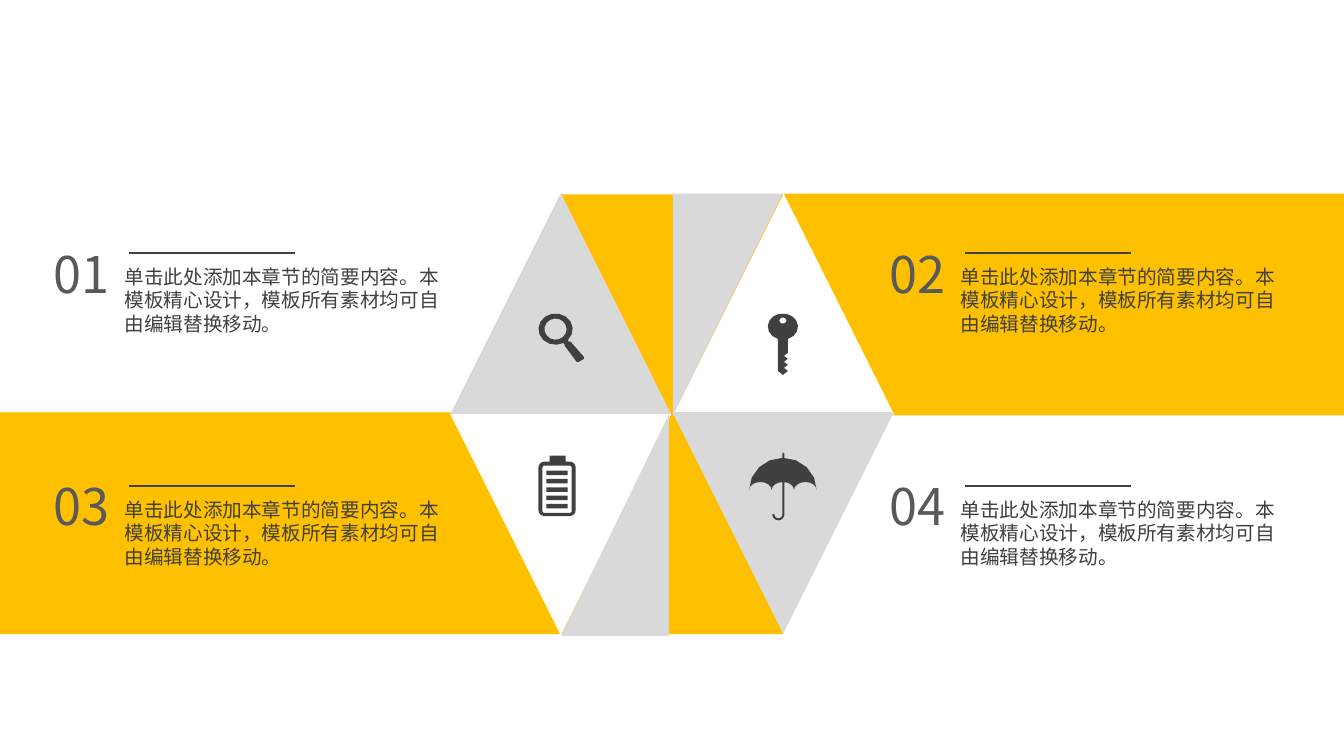
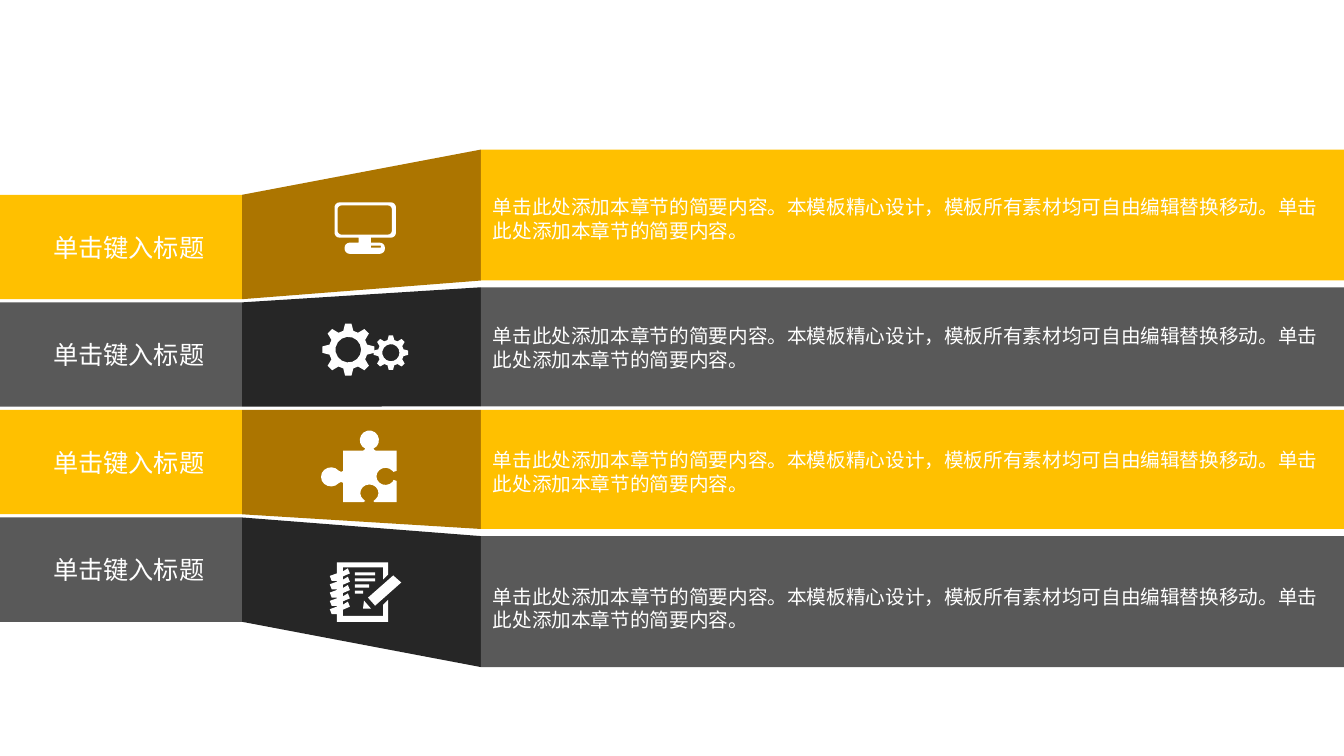
"""Build two infographic slides: a triangle quartet and a folded band list."""
import math

import pptx
import pptx.dml.color
import pptx.enum.shapes
import pptx.enum.text
import pptx.oxml
import pptx.oxml.ns
import pptx.util

Cm, Pt = pptx.util.Cm, pptx.util.Pt
SHAPE = pptx.enum.shapes.MSO_SHAPE
ANCHOR = pptx.enum.text.MSO_ANCHOR
qn = pptx.oxml.ns.qn

FONT = "Noto Sans CJK SC"
GOLD, BRONZE = "FFC000", "AC7500"
GREY, INK, BLACK = "595959", "404040", "262626"
SILVER, WHITE = "D9D9D9", "FFFFFF"
ICON_UNIT = 0.0254

SIDE = 5.59
BANDS = [(19.69, 4.88, 14.18), (0, 10.39, 14.17)]
TRIANGLES = [
    (11.35, 4.85, SILVER, False),
    (16.94, 4.85, WHITE, False),
    (14.15, 4.9, GOLD, True),
    (11.35, 10.44, WHITE, True),
    (16.94, 10.39, SILVER, True),
    (14.15, 10.39, GOLD, False),
]
HALVES = [(16.96, 4.88, 2.77, "flipV"), (14.14, 10.44, 2.72, "flipH")]
NOTE = "单击此处添加本章节的简要内容。本模板精心设计，模板所有素材均可自由编辑替换移动。"
NOTES = [("01", NOTE), ("02", NOTE), ("03", NOTE), ("04", NOTE)]
NOTE_DX, NOTE_DY = 21.07, 5.87

LONG_NOTE = NOTE + "单击此处添加本章节的简要内容。"
ROWS = [
    {"title": "单击键入标题", "text": LONG_NOTE, "top": 3.77, "height": 3.3, "mid": 5.51},
    {"title": "单击键入标题", "text": LONG_NOTE, "top": 7.24, "height": 3, "mid": 8.76},
    {"title": "单击键入标题", "text": LONG_NOTE, "top": 10.33, "height": 3, "mid": 11.88},
    {"title": "单击键入标题", "text": LONG_NOTE, "top": 13.51, "height": 3.3, "mid": 15.33},
]
ROW_COLOURS = [(GOLD, BRONZE), (GREY, BLACK)]
LABEL_TOP, LABEL_STEP, LABEL_W, LABEL_H = 4.91, 2.71, 6.1, 2.63
PANEL_X, PANEL_W = 12.12, 21.75


def rgb(value):
    """Turn a hex string into a colour."""
    return pptx.dml.color.RGBColor.from_string(value)


def arc(cx, cy, rx, ry, start=0, end=360):
    """Return points along an ellipse, with angles clockwise in degrees."""
    n = max(2, round(abs(end - start) / 24))
    angles = [math.radians(start + (end - start) * i / n) for i in range(n + 1)]
    return [(cx + rx * math.cos(a), cy + ry * math.sin(a)) for a in angles]


def ring(cx, cy, rx, ry):
    """Return a closed ellipse without a doubled end point."""
    return arc(cx, cy, rx, ry)[:-1]


def box(x, y, w, h, r=0):
    """Return a rectangle outline with optional round corners."""
    if not r:
        return [(x, y), (x + w, y), (x + w, y + h), (x, y + h)]
    corners = [(x + w - r, y + h - r), (x + r, y + h - r), (x + r, y + r), (x + w - r, y + r)]
    return [pt for i, (cx, cy) in enumerate(corners)
            for pt in arc(cx, cy, r, r, 90 * i, 90 * i + 90)[:None if r > 1 else 1]]


def magnifier():
    """Outline a magnifying glass."""
    handle = [(30, 28), (32, 28), (45, 43), (45, 45), (40, 48), (38, 48), (26, 32), (26, 31)]
    return [arc(17, 15.5, 17, 15.5, 62, 404) + handle, ring(17, 15.5, 11, 10.5)]


def key():
    """Outline a key."""
    teeth = [pt for y in (39, 45, 51) for pt in ((20, y), (16, y + 3))]
    stem = [(20, 26)] + teeth + [(20, 57), (15, 61), (10, 57), (10, 26)]
    return [arc(15, 13, 15, 13, 110, 430) + stem, ring(15, 7, 3.5, 3)]


def battery():
    """Outline a full battery."""
    bars = [box(8, 15 + 8.25 * i, 21, 4.5) for i in range(5)]
    return [box(11, 0, 16, 6), box(0, 6, 37, 54, 6), box(4, 10, 29, 47, 2)] + bars


def umbrella():
    """Outline an umbrella."""
    canopy = arc(33.5, 37, 33.5, 32, 180, 360)
    for cx in (55.8, 33.5, 11.2):
        canopy += arc(cx, 37, 11.2, 8, 0, -180)[1:]
    hook = [(35, 29)] + arc(29, 61, 6, 6, 0, 180) + arc(29, 61, 4, 4, 180, 0) + [(33, 29)]
    return [canopy, box(33, 0, 2, 5), hook]


def monitor():
    """Outline a desktop computer."""
    return [box(0, 0, 61, 35, 5), box(3, 3, 54, 29, 4), box(24, 35, 12, 5),
            box(10, 40, 40, 11, 5), box(36, 43, 10, 2)]


def gear(cx, cy, tip, root, hole):
    """Outline one gear wheel with eight teeth."""
    tooth = [(-15, root), (-7, tip), (7, tip), (15, root)]
    rim = [(cx + r * math.cos(math.radians(45 * i + a)), cy + r * math.sin(math.radians(45 * i + a)))
           for i in range(8) for a, r in tooth]
    return [rim, ring(cx, cy, hole, hole)]


def big_gear():
    """Outline the large gear."""
    return gear(25.5, 26, 26, 19.3, 12.7)


def small_gear():
    """Outline the small gear."""
    return gear(17, 17.3, 17.3, 13, 8.5)


def puzzle():
    """Outline a jigsaw piece."""
    return [
        [(22, 20), (42, 20), (44, 18)] + arc(48, 9.5, 9.5, 9.5, 140, 400)
        + [(52, 18), (54, 20), (75, 20), (75, 40), (72, 41)] + arc(64, 45.5, 9, 8.5, -40, -320)
        + [(72, 49), (75, 50), (75, 71), (53, 71), (52, 70)] + arc(48, 62, 9, 8.5, 50, -230)
        + [(44, 70), (42, 71), (22, 71), (22, 52), (20, 51)] + arc(10, 46, 10, 9.5, 40, 320)
        + [(20, 41), (22, 40)]
    ]


def notebook():
    """Outline a spiral notebook with a pencil."""
    ring_tops = [9 + 8.25 * i for i in range(5)]
    cover = [(7, 0), (58, 0), (58, 12), (53, 17), (53, 5), (13, 5)]
    for y in ring_tops:
        cover += [(13, y), (18, y - 3), (20, y + 2), (13, y + 5)]
    cover += [(13, 53), (53, 53), (53, 42), (58, 37), (58, 59), (7, 59)]
    for y in reversed(ring_tops):
        cover += [(7, y + 9.5), (2, y + 9.5), (0, y + 4.5), (7, y + 2)]
    lines = [box(25, y, w, 3) for y, w in ((10, 20), (16, 20), (22, 14), (28, 8))]
    nib = [(33, 46), (34, 38), (41, 46)]
    pencil = [(63, 13), (38, 35), (45, 43), (71, 20)]
    return [cover, nib, pencil] + lines


TRIANGLE_ICONS = [(19.35, 7.9, key), (13.57, 7.9, magnifier),
                  (13.57, 11.48, battery), (18.88, 11.41, umbrella)]
ROW_ICONS = [(8.13, 8.15, big_gear), (9.42, 8.45, small_gear), (8.43, 5.1, monitor),
             (8.31, 14.17, notebook), (8.09, 10.85, puzzle)]


def paint(sp, fill):
    """Give a shape a flat fill without line or shadow."""
    sp.shadow.inherit = False
    sp.fill.solid()
    sp.fill.fore_color.rgb = rgb(fill)
    sp.line.fill.background()
    return sp


def add_shape(s, kind, x, y, w, h, fill, flip=None):
    """Add a flat preset shape, mirrored when asked."""
    sp = paint(s.shapes.add_shape(kind, Cm(x), Cm(y), Cm(w), Cm(h)), fill)
    if flip:
        sp.element.spPr.find(qn("a:xfrm")).set(flip, "1")
    return sp


def add_outline(s, contours, fill, x=0, y=0, unit=1):
    """Add one freeform made of closed contours."""
    paths = [[(Cm(x + px * unit), Cm(y + py * unit)) for px, py in c] for c in contours]
    builder = s.shapes.build_freeform(*paths[0][0], scale=1.0)
    for i, points in enumerate(paths):
        if i:
            builder.move_to(*points[0])
        builder.add_line_segments(points[1:], close=True)
    return paint(builder.convert_to_shape(), fill)


def add_icons(s, icons, fill):
    """Draw each icon at its place."""
    for x, y, draw in icons:
        add_outline(s, draw(), fill, x, y, ICON_UNIT)


def write(sp, text, size, color, anchor=ANCHOR.TOP, spacing=None, left=0.25):
    """Put left-aligned text into a shape."""
    tf = sp.text_frame
    tf.word_wrap = True
    tf.vertical_anchor = anchor
    tf.margin_left = Cm(left)
    p = tf.paragraphs[0]
    p.alignment = pptx.enum.text.PP_ALIGN.LEFT
    if spacing:
        p.line_spacing = Pt(spacing)
    r = p.add_run()
    r.text = text
    r.font.size = Pt(size)
    r.font.name = FONT
    r.font.color.rgb = rgb(color)
    ea = pptx.oxml.parse_xml(f'<a:ea {pptx.oxml.ns.nsdecls("a")} typeface="{FONT}"/>')
    r._r.get_or_add_rPr().append(ea)


def add_text(s, x, y, w, h, text, size, color, **options):
    """Add a text box."""
    write(s.shapes.add_textbox(Cm(x), Cm(y), Cm(w), Cm(h)), text, size, color, **options)


def add_rule(s, x, y, w):
    """Add a thin horizontal line."""
    line = s.shapes.add_connector(
        pptx.enum.shapes.MSO_CONNECTOR.STRAIGHT, Cm(x), Cm(y), Cm(x + w), Cm(y))
    line.line.color.rgb = rgb(INK)
    line.line.width = Pt(1.25)
    line.element.spPr.append(
        pptx.oxml.parse_xml(f'<a:effectLst {pptx.oxml.ns.nsdecls("a")}/>'))


def triangle_slide(s):
    """Draw four notes around a hexagon of triangles."""
    for x, y, w in BANDS:
        add_shape(s, SHAPE.RECTANGLE, x, y, w, SIDE, GOLD)
    for x, y, fill, down in TRIANGLES:
        add_shape(s, SHAPE.ISOSCELES_TRIANGLE, x, y, SIDE, SIDE, fill, "flipV" if down else None)
    for x, y, w, flip in HALVES:
        add_shape(s, SHAPE.RIGHT_TRIANGLE, x, y, w, SIDE, SILVER, flip)
    for i, (number, note) in enumerate(NOTES):
        dx, dy = i % 2 * NOTE_DX, i // 2 * NOTE_DY
        add_rule(s, 3.25 + dx, 6.38 + dy, 4.19)
        add_text(s, 1.09 + dx, 5.99 + dy, 2.67, 1.88, number, 36, GREY)
        add_text(s, 2.89 + dx, 6.54 + dy, 8.6, 2, note, 14, INK, spacing=16.8)
    add_icons(s, TRIANGLE_ICONS, INK)


def band_slide(s):
    """Draw four bands that widen from label to panel."""
    for i, row in enumerate(ROWS):
        front, side = ROW_COLOURS[i % 2]
        top, panel_top = LABEL_TOP + i * LABEL_STEP, row["top"]
        label = add_shape(s, SHAPE.RECTANGLE, 0, top, LABEL_W, LABEL_H, front)
        write(label, row["title"], 18, WHITE, anchor=ANCHOR.MIDDLE, left=1.34)
        add_outline(s, [[(LABEL_W, top), (PANEL_X, panel_top),
                         (PANEL_X, panel_top + row["height"]), (LABEL_W, top + LABEL_H)]], side)
        add_shape(s, SHAPE.RECTANGLE, PANEL_X, panel_top, PANEL_W, row["height"], front)
        add_text(s, PANEL_X + 0.05, row["mid"] - 0.9, 21.45, 1.8, row["text"], 14, WHITE,
                 anchor=ANCHOR.MIDDLE, spacing=16.8)
    add_icons(s, ROW_ICONS, WHITE)


def main():
    """Build and save the presentation."""
    prs = pptx.Presentation()
    prs.slide_width, prs.slide_height = Cm(33.87), Cm(19.05)
    for draw in (triangle_slide, band_slide):
        draw(prs.slides.add_slide(prs.slide_layouts[6]))
    prs.save("out.pptx")


if __name__ == "__main__":
    main()
